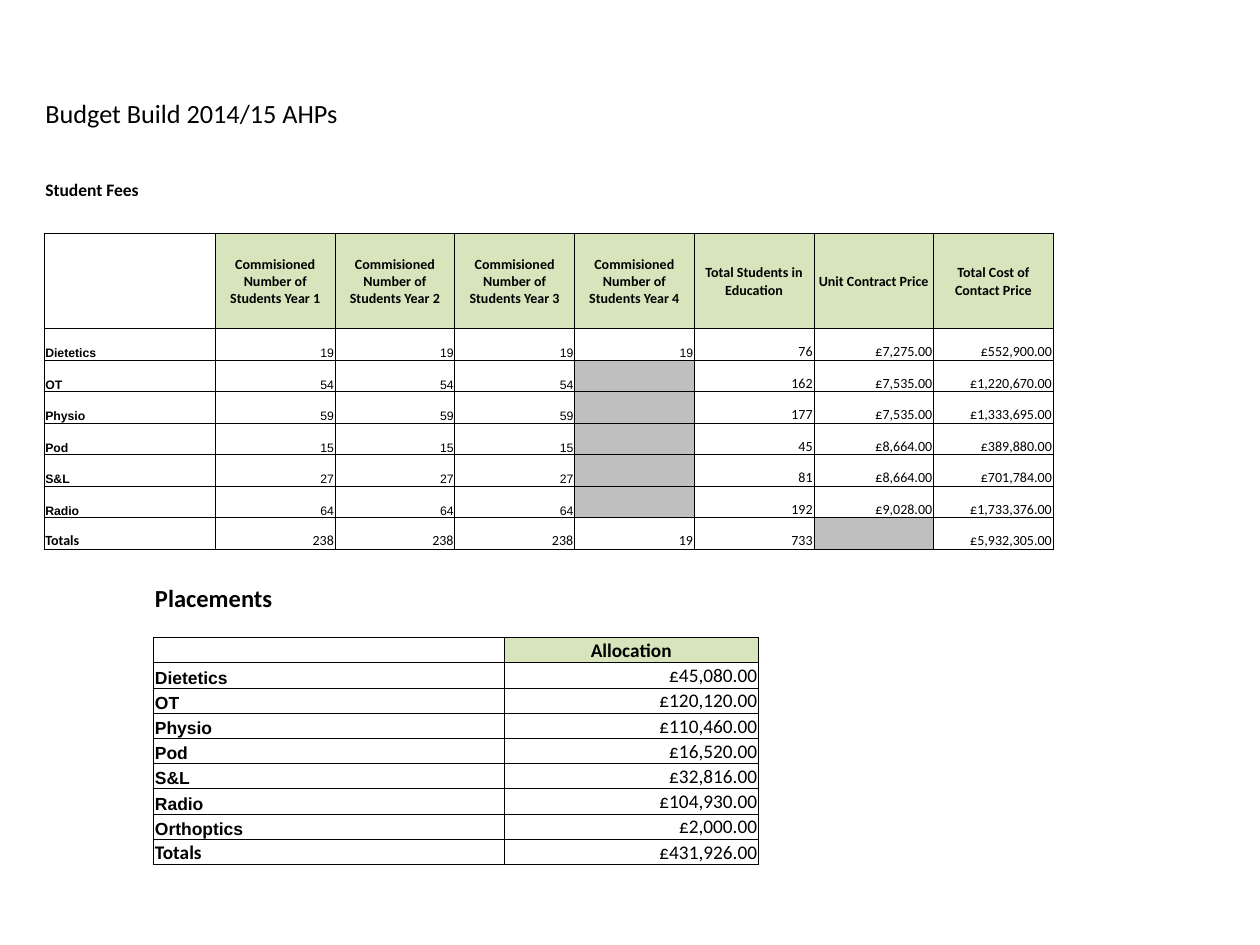
from dataclasses import dataclass, replace

from lxml import etree
from pptx import Presentation
from pptx.dml.color import RGBColor
from pptx.enum import text
from pptx.oxml import ns
from pptx.table import Table, _Cell
from pptx.util import Inches, Pt

BLACK = RGBColor(0x00, 0x00, 0x00)
WHITE = RGBColor(0xFF, 0xFF, 0xFF)
GREEN = RGBColor(0xD7, 0xE4, 0xBC)
GREY = RGBColor(0xBF, 0xBF, 0xBF)
LEFT, CENTER, RIGHT = text.PP_ALIGN.LEFT, text.PP_ALIGN.CENTER, text.PP_ALIGN.RIGHT
BOTTOM, MIDDLE = text.MSO_ANCHOR.BOTTOM, text.MSO_ANCHOR.MIDDLE
SIDES = ("L", "R", "T", "B")
MARGINS = {
    "margin_left": Inches(0.01),
    "margin_right": Inches(0.01),
    "margin_top": Inches(0.01),
    "margin_bottom": 0,
}


@dataclass(frozen=True)
class CellFormat:
    size: float
    font: str = "Calibri"
    bold: bool = False
    align: text.PP_ALIGN = LEFT
    anchor: text.MSO_ANCHOR = BOTTOM
    fill: RGBColor = WHITE
    borders: str = "LRTB"


@dataclass(frozen=True)
class Course:
    name: str
    students: tuple[int, ...]
    price: int


@dataclass(frozen=True)
class Placement:
    name: str
    allocation: int


COURSES = [
    Course("Dietetics", (19, 19, 19, 19), 7275),
    Course("OT", (54, 54, 54), 7535),
    Course("Physio", (59, 59, 59), 7535),
    Course("Pod", (15, 15, 15), 8664),
    Course("S&L", (27, 27, 27), 8664),
    Course("Radio", (64, 64, 64), 9028),
]
PLACEMENTS = [
    Placement("Dietetics", 45080),
    Placement("OT", 120120),
    Placement("Physio", 110460),
    Placement("Pod", 16520),
    Placement("S&L", 32816),
    Placement("Radio", 104930),
    Placement("Orthoptics", 2000),
]
YEARS = 4
FEE_HEADINGS = [f"Commisioned Number of Students Year {year + 1}" for year in range(YEARS)]
FEE_HEADINGS += ["Total Students in Education", "Unit Contract Price", "Total Cost of Contact Price"]


def pounds(amount: int) -> str:
    return f"£{amount:,}.00"


def set_borders(cell: _Cell, visible: str) -> None:
    properties = cell._tc.get_or_add_tcPr()
    for side in SIDES:
        line = etree.SubElement(properties, ns.qn(f"a:ln{side}"), w=str(Pt(0.5)))
        if side in visible:
            fill = etree.SubElement(line, ns.qn("a:solidFill"))
            etree.SubElement(fill, ns.qn("a:srgbClr"), val=str(BLACK))
        else:
            etree.SubElement(line, ns.qn("a:noFill"))


def write_cell(cell: _Cell, content: str, style: CellFormat) -> None:
    set_borders(cell, style.borders)
    cell.fill.solid()
    cell.fill.fore_color.rgb = style.fill
    cell.vertical_anchor = style.anchor
    for name, value in MARGINS.items():
        setattr(cell, name, value)
    paragraph = cell.text_frame.paragraphs[0]
    paragraph.alignment = style.align
    if not content:
        # The end mark sets the height of an empty line
        etree.SubElement(paragraph._p, ns.qn("a:endParaRPr"), sz=str(int(style.size * 100)))
        return
    run = paragraph.add_run()
    run.text = content
    for name, value in {"size": Pt(style.size), "name": style.font, "bold": style.bold}.items():
        setattr(run.font, name, value)
    run.font.color.rgb = BLACK


def write_row(table: Table, row: int, contents: list[str], styles: list[CellFormat]) -> None:
    for column, (content, style) in enumerate(zip(contents, styles)):
        write_cell(table.cell(row, column), content, style)


def write_heading(table: Table, row: int, content: str, style: CellFormat) -> None:
    """Write an unbordered row with text in its first cell only."""
    count = len(table.columns)
    style = replace(style, borders="")
    write_row(table, row, [content] + [""] * (count - 1), [style] + [replace(style, size=8)] * (count - 1))


def write_spacer(table: Table, row: int, borders: str) -> None:
    count = len(table.columns)
    write_row(table, row, [""] * count, [CellFormat(6, borders=borders)] * count)


def add_plain_table(slide, left: float, top: float, widths: list[float], heights: list[float]) -> Table:
    frame = slide.shapes.add_table(len(heights), len(widths), Inches(left), Inches(top),
                                   Inches(sum(widths)), Inches(sum(heights)))
    table = frame.table
    table.first_row = table.horz_banding = False
    for column, width in zip(table.columns, widths):
        column.width = Inches(width)
    for row, height in zip(table.rows, heights):
        row.height = Inches(height)
    return table


def add_student_fees(slide) -> None:
    table = add_plain_table(slide, 0.35, 0.6, [1.36] + [0.95] * 7,
                            [0.44, 0.25, 0.31, 0.25, 0.76] + [0.25] * (len(COURSES) + 1))
    write_heading(table, 0, "Budget Build 2014/15 AHPs", CellFormat(15))
    table.cell(0, 0).merge(table.cell(0, 2))
    write_spacer(table, 1, "")
    write_heading(table, 2, "Student Fees", CellFormat(10, bold=True))
    write_spacer(table, 3, "B")

    heading = CellFormat(8, bold=True, align=CENTER, anchor=MIDDLE, fill=GREEN)
    write_row(table, 4, [""] + FEE_HEADINGS, [CellFormat(8)] + [heading] * len(FEE_HEADINGS))

    label = CellFormat(7, "Arial", bold=True)
    number = CellFormat(7, "Arial", align=RIGHT)
    total = CellFormat(8, align=RIGHT)
    unused = CellFormat(7, fill=GREY)
    for row, course in enumerate(COURSES, start=5):
        missing = YEARS - len(course.students)
        students = sum(course.students)
        contents = [course.name, *map(str, course.students), *[""] * missing,
                    str(students), pounds(course.price), pounds(students * course.price)]
        styles = [label] + [number] * len(course.students) + [unused] * missing + [total] * 3
        write_row(table, row, contents, styles)

    by_year = [sum(course.students[year] for course in COURSES if year < len(course.students))
               for year in range(YEARS)]
    cost = sum(sum(course.students) * course.price for course in COURSES)
    write_row(table, 5 + len(COURSES),
              ["Totals", *map(str, by_year), str(sum(by_year)), "", pounds(cost)],
              [CellFormat(8, bold=True)] + [total] * (YEARS + 1) + [unused, total])


def add_placements(slide) -> None:
    table = add_plain_table(slide, 1.22, 4.62, [2.78, 2.02],
                            [0.25, 0.19] + [0.2] * (len(PLACEMENTS) + 2))
    write_heading(table, 0, "Placements", CellFormat(14, bold=True))
    write_spacer(table, 1, "B")
    heading = CellFormat(11, bold=True, align=CENTER, anchor=MIDDLE, fill=GREEN)
    write_row(table, 2, ["", "Allocation"], [CellFormat(8), heading])

    label = CellFormat(10, "Arial", bold=True)
    amount = CellFormat(11, align=RIGHT)
    for row, placement in enumerate(PLACEMENTS, start=3):
        write_row(table, row, [placement.name, pounds(placement.allocation)], [label, amount])
    total = sum(placement.allocation for placement in PLACEMENTS)
    write_row(table, 3 + len(PLACEMENTS), ["Totals", pounds(total)], [CellFormat(11, bold=True), amount])


def main() -> None:
    presentation = Presentation()
    presentation.slide_width, presentation.slide_height = Inches(10), Inches(7.5)
    slide = presentation.slides.add_slide(presentation.slide_layouts[6])
    add_student_fees(slide)
    add_placements(slide)
    presentation.save("out.pptx")


if __name__ == "__main__":
    main()
